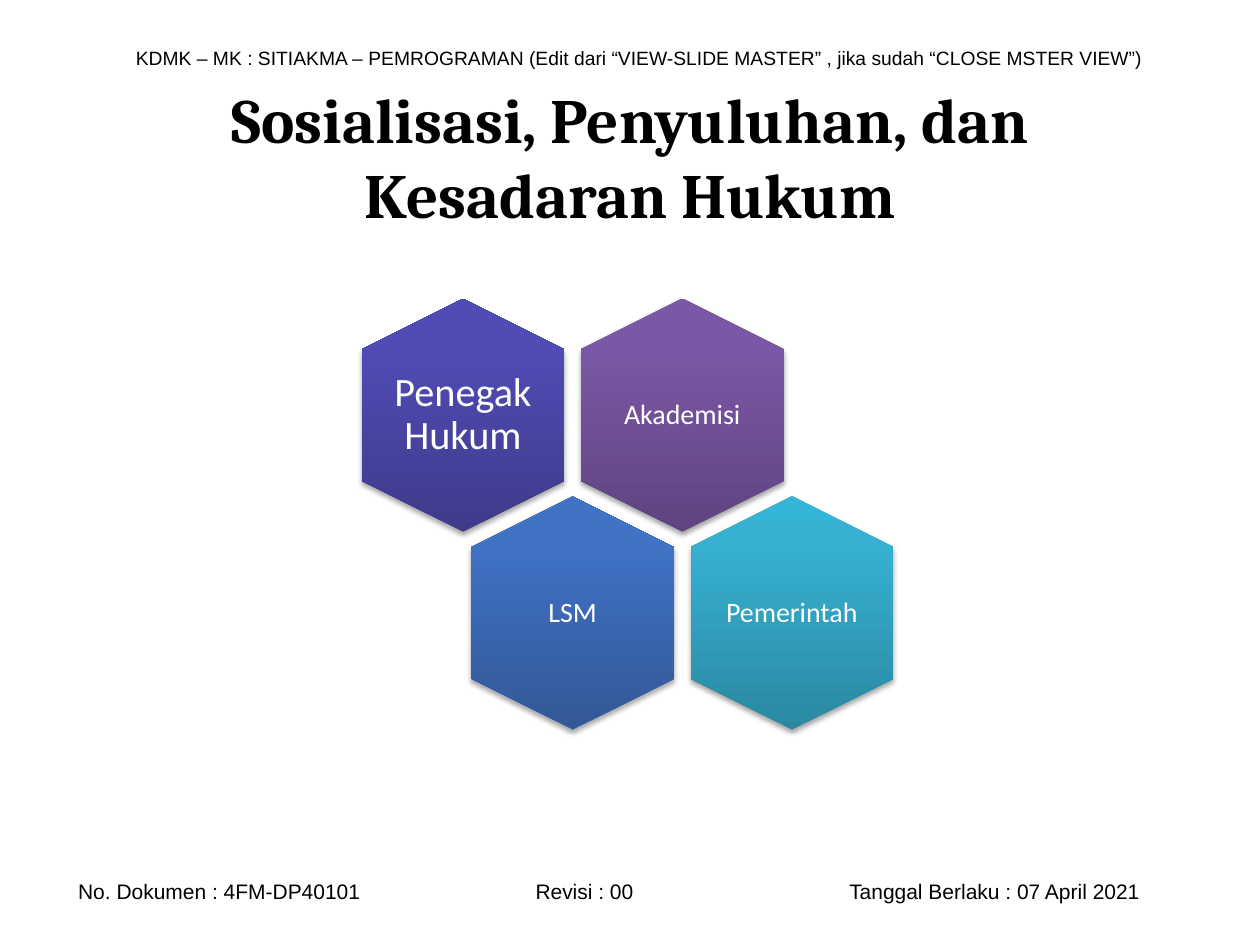
from lxml import etree
from pptx import Presentation
from pptx.dml.color import RGBColor
from pptx.enum.shapes import MSO_SHAPE
from pptx.enum.text import MSO_ANCHOR, PP_ALIGN
from pptx.oxml import parse_xml
from pptx.oxml.ns import nsdecls, qn
from pptx.util import Inches, Pt

HEXAGON = MSO_SHAPE.HEXAGON
MIDDLE = MSO_ANCHOR.MIDDLE
LEFT, CENTER = PP_ALIGN.LEFT, PP_ALIGN.CENTER

COLORS = {"text": "000000", "label": "FFFFFF", "shadow": "000000"}
# Gradient stops from bottom to top, at 0, 80 and 100 percent
GRADIENTS = {
    "purple": ("5F4480", "7B58A6", "7C57A8"),
    "indigo": ("3E3B8B", "504CB5", "4F4BB8"),
    "blue": ("325897", "4172C4", "3F72C7"),
    "cyan": ("2A88A2", "37B1D2", "34B4D6"),
}
STOPS = (0, 80000, 100000)

# Honeycomb: hexagon length and breadth, column and row steps, first corner
HEX_LENGTH, HEX_BREADTH = 1.85, 1.61
COL_STEP, ROW_STEP = 1.74, 1.57
COMB_LEFT, COMB_TOP = 2.75, 2.49
LABEL_WIDTH, LABEL_HEIGHT = 1.11, 1.27

# Label, gradient, column, row, text size
CELLS = [
    ("Akademisi", "purple", 1, 0, 16),
    ("Penegak Hukum", "indigo", 0, 0, 23),
    ("LSM", "blue", 0.5, 1, 16),
    ("Pemerintah", "cyan", 1.5, 1, 16),
]


def add_text(s, text, box, font, size, color="text", bold=False,
             align=LEFT, insets=(0.1, 0.05), tabs=()):
    """Add a middle-anchored text box; insets are horizontal and vertical."""
    tf = s.shapes.add_textbox(*(Inches(v) for v in box)).text_frame
    tf.word_wrap = True
    tf.vertical_anchor = MIDDLE
    tf.margin_left = tf.margin_right = Inches(insets[0])
    tf.margin_top = tf.margin_bottom = Inches(insets[1])
    p = tf.paragraphs[0]
    p.alignment = align
    if tabs:
        tab_list = etree.SubElement(p._p.get_or_add_pPr(), qn("a:tabLst"))
        for pos in tabs:
            etree.SubElement(tab_list, qn("a:tab"), pos=str(Inches(pos)), algn="l")
    r = p.add_run()
    r.text = text
    r.font.name = font
    r.font.size = Pt(size)
    r.font.bold = bold
    r.font.color.rgb = RGBColor.from_string(COLORS[color])
    return p


def set_gradient_and_shadow(sp, colors):
    """Keep both upright while the shape itself is rotated."""
    stops = "".join(
        f'<a:gs pos="{pos}"><a:srgbClr val="{c}"/></a:gs>'
        for pos, c in zip(STOPS, colors))
    sp.line.fill.background()
    line = sp.line._ln
    line.addprevious(parse_xml(
        f'<a:gradFill {nsdecls("a")} rotWithShape="0"><a:gsLst>{stops}</a:gsLst>'
        '<a:lin ang="16200000" scaled="0"/></a:gradFill>'))
    line.addnext(parse_xml(
        f'<a:effectLst {nsdecls("a")}><a:outerShdw blurRad="{Pt(3.1)}" '
        f'dist="{Pt(1.8)}" dir="5400000" rotWithShape="0">'
        f'<a:srgbClr val="{COLORS["shadow"]}"><a:alpha val="35000"/></a:srgbClr>'
        '</a:outerShdw></a:effectLst>'))


def add_cell(s, label, gradient, col, row, size):
    left = COMB_LEFT + col * COL_STEP
    top = COMB_TOP + row * ROW_STEP
    sp = s.shapes.add_shape(HEXAGON, Inches(left), Inches(top),
                            Inches(HEX_LENGTH), Inches(HEX_BREADTH))
    sp.rotation = 90
    sp.adjustments[0] = 0.25
    set_gradient_and_shadow(sp, GRADIENTS[gradient])
    box = (left + (HEX_LENGTH - LABEL_WIDTH) / 2,
           top + (HEX_BREADTH - LABEL_HEIGHT) / 2, LABEL_WIDTH, LABEL_HEIGHT)
    p = add_text(s, label, box, "Calibri", size, "label",
                 align=CENTER, insets=(0, 0))
    p.line_spacing = 0.9


def main():
    prs = Presentation()
    prs.slide_width, prs.slide_height = Inches(10), Inches(7.5)
    s = prs.slides.add_slide(prs.slide_layouts[6])
    add_text(s, "KDMK – MK : SITIAKMA – PEMROGRAMAN (Edit dari “VIEW-SLIDE "
             "MASTER” , jika sudah “CLOSE MSTER VIEW”)",
             (0.98, 0.31, 8.35, 0.29), "Arial", 11)
    footer = ("No. Dokumen : 4FM-DP40101", "Revisi : 00",
              "Tanggal Berlaku : 07 April 2021")
    add_text(s, "\t".join(footer), (0.2, 6.92, 9.45, 0.3), "Arial", 12,
             insets=(0.42, 0.05), tabs=(3.63, 6.12))
    add_text(s, "Sosialisasi, Penyuluhan, dan Kesadaran Hukum",
             (0.5, 0.61, 9, 1.25), "Cambria", 36, bold=True, align=CENTER)
    for cell in CELLS:
        add_cell(s, *cell)
    prs.save("out.pptx")


if __name__ == "__main__":
    main()
